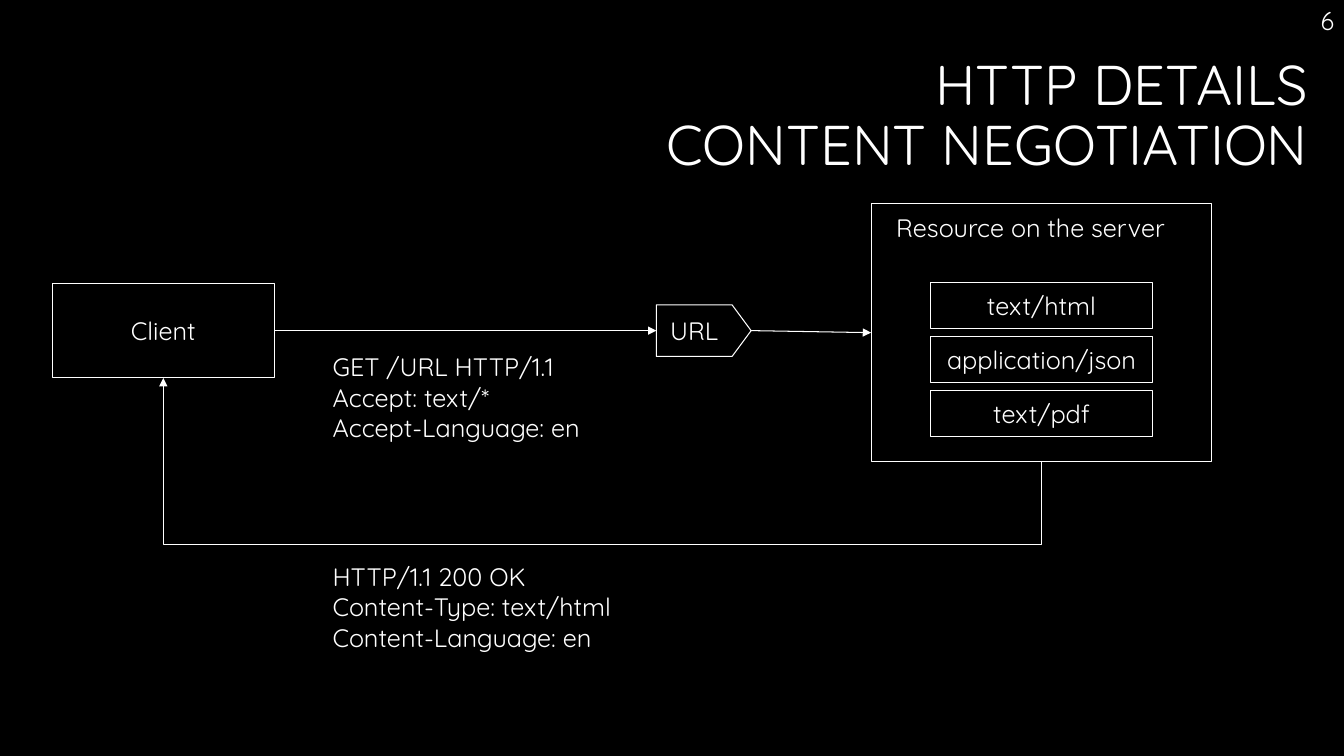
from lxml.etree import SubElement
from pptx import Presentation
from pptx.dml.color import RGBColor
from pptx.enum.shapes import MSO_CONNECTOR, MSO_SHAPE
from pptx.enum.text import MSO_ANCHOR, MSO_AUTO_SIZE, PP_ALIGN
from pptx.oxml.ns import qn
from pptx.util import Inches, Pt

# Content
TITLE = "HTTP DETAILS\vCONTENT NEGOTIATION"
PAGE_NUMBER = "6"
RESOURCE_LABEL = "Resource on the server"
REPRESENTATIONS = ["text/html", "application/json", "text/pdf"]
REQUEST = ["GET /URL HTTP/1.1", "Accept: text/*", "Accept-Language: en"]
RESPONSE = ["HTTP/1.1 200 OK", "Content-Type: text/html", "Content-Language: en"]

# Style and layout, in inches
FONT, INK, PAPER = "Quicksand", "FFFFFF", "000000"
WIDTH, HEIGHT = 13.33, 7.5
CLIENT = (0.52, 2.81, 2.2, 0.94)
RESOURCE = (8.64, 2.02, 3.38, 2.56)
URL_CENTER, URL_SIZE = (6.98, 3.28), (0.51, 0.94)
ROW_TOP, ROW_PITCH, ROW_HEIGHT = 2.8, 0.535, 0.46
MESSAGE_LEFT = 3.2
RETURN_Y = 5.4


def color(hex_text):
    return RGBColor.from_string(hex_text)


def style_text(frame, size=18, align=PP_ALIGN.LEFT):
    for paragraph in frame.paragraphs:
        paragraph.alignment = align
        for run in paragraph.runs:
            run.font.name, run.font.size = FONT, Pt(size)
            run.font.color.rgb = color(INK)


def add_box(box, text="", preset=MSO_SHAPE.RECTANGLE):
    shape = slide.shapes.add_shape(preset, *map(Inches, box))
    shape.shadow.inherit = False
    shape.fill.solid()
    shape.fill.fore_color.rgb = color(PAPER)
    fill_color = shape.fill._xPr.find(qn("a:solidFill"))[0]
    SubElement(fill_color, qn("a:alpha"), val="50000")
    shape.line.color.rgb, shape.line.width = color(INK), Pt(0.75)
    shape.text_frame.text = text
    shape.text_frame.vertical_anchor = MSO_ANCHOR.MIDDLE
    style_text(shape.text_frame, align=PP_ALIGN.CENTER)
    return shape


def add_text(box, lines, align=PP_ALIGN.LEFT):
    frame = slide.shapes.add_textbox(*map(Inches, box)).text_frame
    frame.word_wrap = True
    frame.text = "\n".join(lines)
    style_text(frame, align=align)


def add_arrow(start, end, kind=MSO_CONNECTOR.STRAIGHT):
    arrow = slide.shapes.add_connector(kind, *map(Inches, start + end))
    arrow.line.color.rgb, arrow.line.width = color(INK), Pt(0.75)
    SubElement(arrow.line._get_or_add_ln(), qn("a:tailEnd"), type="triangle")
    SubElement(arrow._element.spPr, qn("a:effectLst"))
    return arrow


presentation = Presentation()
presentation.slide_width, presentation.slide_height = Inches(WIDTH), Inches(HEIGHT)
slide = presentation.slides.add_slide(presentation.slide_layouts[5])
slide.background.fill.solid()
slide.background.fill.fore_color.rgb = color(PAPER)

# Title and page number
title = slide.shapes.title
title.left, title.top, title.width, title.height = map(Inches, (0.26, 0.46, 12.81, 1.41))
title.text_frame.text = TITLE
title.text_frame.auto_size = MSO_AUTO_SIZE.NONE
title.text_frame.vertical_anchor = MSO_ANCHOR.MIDDLE
style_text(title.text_frame, 40, PP_ALIGN.RIGHT)
title.text_frame.paragraphs[0].line_spacing = 0.9
add_text((WIDTH - 2.88, 0, 2.88, 0.4), [PAGE_NUMBER], PP_ALIGN.RIGHT)

# Client, resource and its representations
resource = add_box(RESOURCE)
client = add_box(CLIENT, "Client")
resource_middle = RESOURCE[0] + RESOURCE[2] / 2
row_width = CLIENT[2]
for row, media_type in enumerate(REPRESENTATIONS):
    add_box((resource_middle - row_width / 2, ROW_TOP + row * ROW_PITCH,
             row_width, ROW_HEIGHT), media_type)
add_text((8.79, 2.06, 3.07, 0.4), [RESOURCE_LABEL])

# URL tag, turned to point right with upright text
url_x, url_y = URL_CENTER
url_width, url_length = URL_SIZE
url = add_box((url_x - url_width / 2, url_y - url_length / 2, url_width, url_length),
              "URL", MSO_SHAPE.FLOWCHART_OFFPAGE_CONNECTOR)
url.rotation = 270
url.text_frame._txBody.bodyPr.set("vert", "vert")

# Request arrows
url_left, url_right = url_x - url_length / 2, url_x + url_length / 2
to_url = add_arrow((CLIENT[0] + CLIENT[2], url_y), (url_left, url_y))
to_url.begin_connect(client, 3)
to_resource = add_arrow((url_right, url_y), (RESOURCE[0], RESOURCE[1] + RESOURCE[3] / 2))
to_resource.end_connect(resource, 1)

# Response arrow: an elbow turned by 90 degrees that dips below both boxes
client_middle = CLIENT[0] + CLIENT[2] / 2
client_bottom, resource_bottom = CLIENT[1] + CLIENT[3], RESOURCE[1] + RESOURCE[3]
rise, span = resource_bottom - client_bottom, resource_middle - client_middle
center_x = (client_middle + resource_middle) / 2
center_y = (client_bottom + resource_bottom) / 2
response = add_arrow((center_x + rise / 2, center_y - span / 2),
                     (center_x - rise / 2, center_y + span / 2), MSO_CONNECTOR.ELBOW)
response._element.spPr.find(qn("a:xfrm")).set("rot", str(90 * 60000))
dip = round((resource_bottom - RETURN_Y) / rise * 100000)
geometry = response._element.spPr.find(qn("a:prstGeom"))
SubElement(geometry.find(qn("a:avLst")), qn("a:gd"), name="adj1", fmla=f"val {dip}")

# Messages
add_text((MESSAGE_LEFT, 3.44, 3.07, 1.01), REQUEST)
add_text((MESSAGE_LEFT, 5.52, 3.62, 1.01), RESPONSE)

presentation.save("out.pptx")
